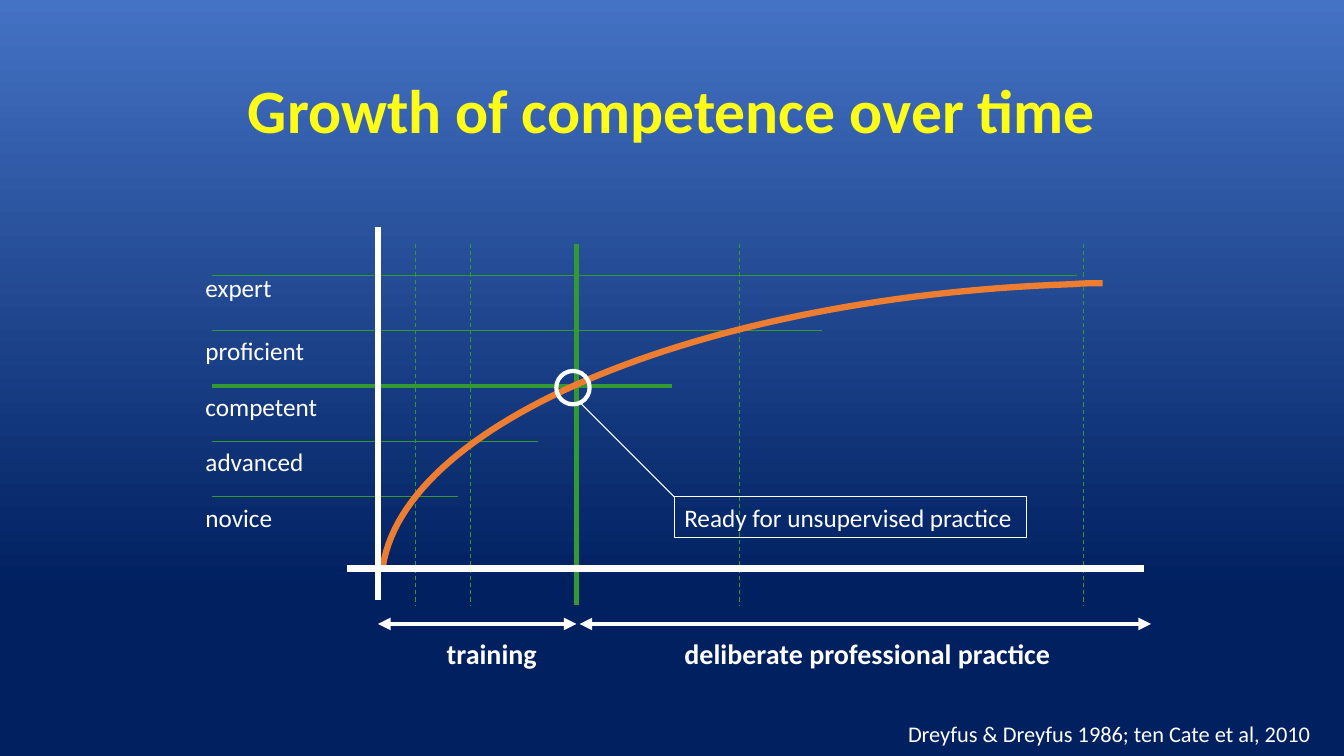
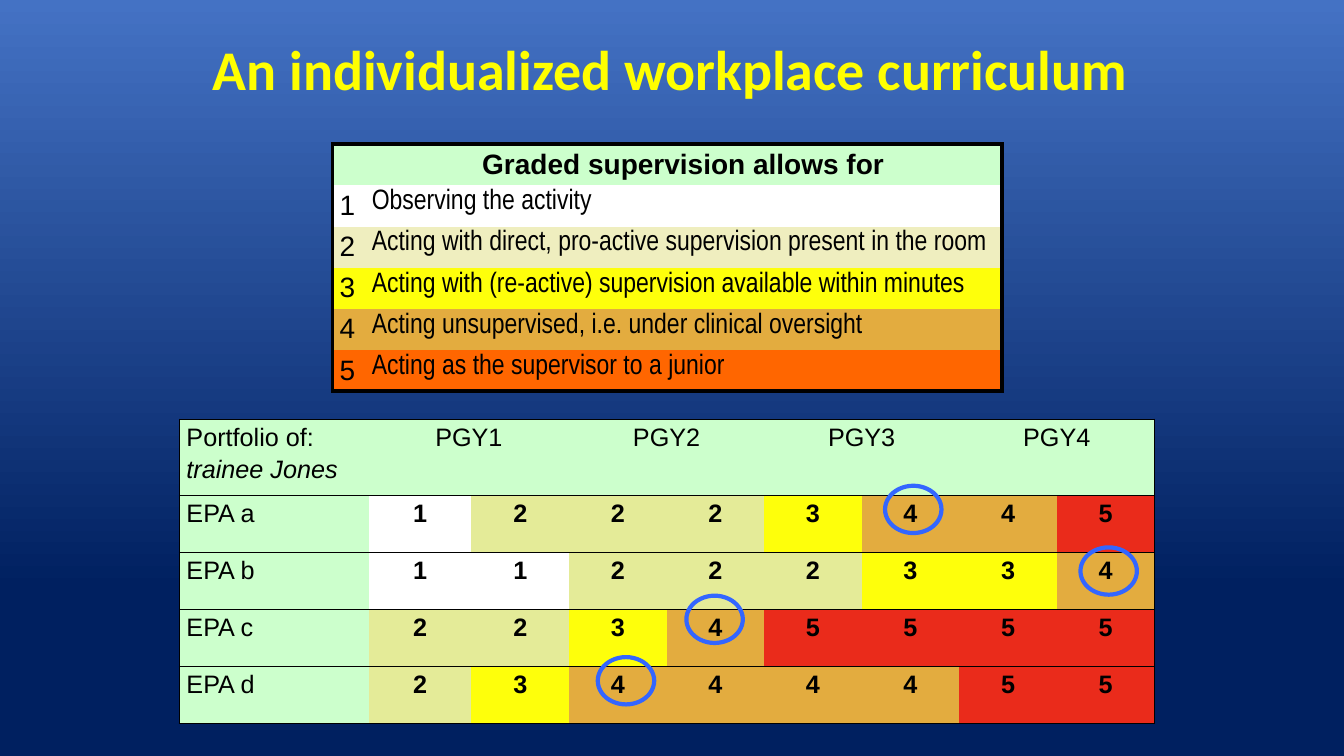
"""Build two slides on the growth of competence and graded supervision."""
from dataclasses import dataclass

from lxml.etree import SubElement
from pptx import Presentation
from pptx.dml.color import RGBColor
from pptx.enum.dml import MSO_LINE
from pptx.enum.shapes import MSO_CONNECTOR, MSO_SHAPE
from pptx.enum.text import MSO_ANCHOR, MSO_AUTO_SIZE, PP_ALIGN
from pptx.oxml import parse_xml
from pptx.oxml.ns import nsdecls, qn
from pptx.util import Pt

COLORS = {
    "sky": "4472C4", "navy": "002060", "white": "FFFFFF", "black": "000000",
    "lemon": "FFFD18", "bright yellow": "FFFF00", "green": "339933",
    "orange": "ED7D31", "mint": "CCFFCC", "blue": "3366FF",
    "cream": "EFEEBF", "lime": "E4EB98", "yellow": "FEFF0B",
    "ochre": "E3AC3F", "vivid orange": "FF6600", "red": "EA2B1B",
}
BODY_FONT = "Calibri"
TABLE_FONT = "Arial"
NO_STYLE = "{2D5ABB26-0587-4C30-8999-92F81FD0307C}"


@dataclass(frozen=True)
class Box:
    left: float
    top: float
    width: float
    height: float

    def lengths(self) -> tuple:
        return Pt(self.left), Pt(self.top), Pt(self.width), Pt(self.height)


@dataclass(frozen=True)
class TextStyle:
    size: float
    color: str = "white"
    bold: bool = False
    font: str = BODY_FONT
    align: PP_ALIGN = PP_ALIGN.LEFT
    spacing: float = 1.0


@dataclass(frozen=True)
class Stroke:
    color: str
    width: float
    dashed: bool = False
    arrows: bool = False


@dataclass(frozen=True)
class Level:
    name: str
    line_end: float
    label_shift: float = 0
    width: float = 0.75


@dataclass(frozen=True)
class Grade:
    text: str
    color: str


@dataclass(frozen=True)
class Phase:
    start: float
    end: float
    label: str
    box: Box


LEVELS = [
    Level("expert", 769, -5.8),
    Level("proficient", 587.5),
    Level("competent", 480.2, width=3),
    Level("advanced", 384.5),
    Level("novice", 326.9),
]
LEVEL_TOP, LEVEL_STEP = 196.6, 39.6
MILESTONES = [296.6, 336.2, 411.8, 528.5, 774]
READY_X = 411.8
PHASES = [
    Phase(270, READY_X, "training", Box(264.2, 451.4, 174.2, 31)),
    Phase(414, 822.2, "deliberate professional practice", Box(423.4, 451.4, 392.4, 31)),
]
CURVE = [
    [(273.6, 403.9), (290.9, 299.5), (505.4, 211.7), (766.1, 203)],
    [(766.1, 203), (773.3, 202.3), (780.5, 202.3), (787.7, 202.3)],
]
GRADES = [
    Grade("Observing the activity", "white"),
    Grade("Acting with direct, pro-active supervision present in the room", "cream"),
    Grade("Acting with (re-active) supervision available within minutes", "yellow"),
    Grade("Acting unsupervised, i.e. under clinical oversight", "ochre"),
    Grade("Acting as the supervisor to a junior", "vivid orange"),
]
PORTFOLIO = {"EPA a": "12223445", "EPA b": "11222334", "EPA c": "22345555", "EPA d": "23444455"}
PORTFOLIO_COLORS = {"1": "white", "2": "lime", "3": "yellow", "4": "ochre", "5": "red"}
HIGHLIGHTS = [(632.2, 347), (490.3, 425.5), (771.8, 391), (427, 469.4)]


def rgb(name: str) -> RGBColor:
    return RGBColor.from_string(COLORS[name])


def style_text(text_frame, style: TextStyle) -> None:
    for paragraph in text_frame.paragraphs:
        paragraph.alignment = style.align
        paragraph.line_spacing = style.spacing
        for run in paragraph.runs:
            run.font.name = style.font
            run.font.size = Pt(style.size)
            run.font.bold = style.bold
            run.font.color.rgb = rgb(style.color)


def set_background(presentation) -> None:
    fill = presentation.slide_master.background.fill
    fill.gradient()
    fill.gradient_angle = 270
    for stop, (position, color) in zip(fill.gradient_stops, [(0, "sky"), (0.78, "navy")]):
        stop.position = position
        stop.color.rgb = rgb(color)


def add_titled_slide(presentation, text: str, box: Box, size: float, color: str):
    slide = presentation.slides.add_slide(presentation.slide_layouts[5])
    title = slide.shapes.title
    title.left, title.top, title.width, title.height = box.lengths()
    title.text_frame.text = text
    title.text_frame.auto_size = MSO_AUTO_SIZE.NONE
    title.text_frame.vertical_anchor = MSO_ANCHOR.MIDDLE
    style_text(title.text_frame, TextStyle(size, color, True, align=PP_ALIGN.CENTER, spacing=0.9))
    return slide


def fill_text(shape, text: str, style: TextStyle, wrap: bool) -> None:
    text_frame = shape.text_frame
    text_frame.text = text
    text_frame.word_wrap = wrap
    text_frame.auto_size = MSO_AUTO_SIZE.SHAPE_TO_FIT_TEXT
    style_text(text_frame, style)


def add_text(slide, text: str, box: Box, style: TextStyle, wrap: bool = True) -> None:
    fill_text(slide.shapes.add_textbox(*box.lengths()), text, style, wrap)


def set_stroke(line, stroke: Stroke) -> None:
    line.color.rgb = rgb(stroke.color)
    line.width = Pt(stroke.width)
    if stroke.dashed:
        line.dash_style = MSO_LINE.DASH


def add_line(slide, x1: float, y1: float, x2: float, y2: float, stroke: Stroke) -> None:
    connector = slide.shapes.add_connector(
        MSO_CONNECTOR.STRAIGHT, Pt(x1), Pt(y1), Pt(x2), Pt(y2))
    set_stroke(connector.line, stroke)
    properties = connector._element.spPr
    if stroke.arrows:
        outline = properties.find(qn("a:ln"))
        for end in ("a:headEnd", "a:tailEnd"):
            SubElement(outline, qn(end), type="triangle")
    SubElement(properties, qn("a:effectLst"))


def add_outline(slide, preset: MSO_SHAPE, box: Box, stroke: Stroke):
    shape = slide.shapes.add_shape(preset, *box.lengths())
    shape.shadow.inherit = False
    shape.fill.background()
    set_stroke(shape.line, stroke)
    return shape


def bezier_points(controls: list, steps: int) -> list:
    points = []
    for step in range(1, steps + 1):
        t = step / steps
        weights = [(1 - t) ** 3, 3 * t * (1 - t) ** 2, 3 * t ** 2 * (1 - t), t ** 3]
        points.append(tuple(
            Pt(sum(weight * point[axis] for weight, point in zip(weights, controls)))
            for axis in (0, 1)))
    return points


def add_curve(slide) -> None:
    start_x, start_y = CURVE[0][0]
    builder = slide.shapes.build_freeform(Pt(start_x), Pt(start_y))
    for controls, steps in zip(CURVE, (60, 4)):
        builder.add_line_segments(bezier_points(controls, steps), close=False)
    curve = builder.convert_to_shape()
    curve.shadow.inherit = False
    curve.fill.background()
    set_stroke(curve.line, Stroke("orange", 4.5))


def add_plain_table(slide, box: Box, columns: list, rows: list):
    frame = slide.shapes.add_table(len(rows), len(columns), *box.lengths())
    table = frame.table
    table.first_row = table.horz_banding = False
    for style_id in frame._element.iter(qn("a:tableStyleId")):
        style_id.text = NO_STYLE
    for column, width in zip(table.columns, columns):
        column.width = Pt(width)
    for row, height in zip(table.rows, rows):
        row.height = Pt(height)
    return table


def fill_cell(cell, text: str, color: str, style: TextStyle) -> None:
    cell.margin_left = cell.margin_right = Pt(5)
    cell.margin_top = cell.margin_bottom = Pt(0)
    cell.fill.solid()
    cell.fill.fore_color.rgb = rgb(color)
    if text:
        cell.text_frame.text = text
        style_text(cell.text_frame, style)


def add_borders(table, width: float, row_lines: bool) -> None:
    last_row, last_column = len(table.rows) - 1, len(table.columns) - 1
    for row in range(last_row + 1):
        for column in range(last_column + 1):
            cell = table.cell(row, column)
            right = column + (cell.span_width - 1 if cell.is_merge_origin else 0)
            sides = {
                "lnL": column == 0,
                "lnR": right == last_column,
                "lnT": row_lines or row == 0,
                "lnB": row_lines or row == last_row,
            }
            properties = cell._tc.get_or_add_tcPr()
            for side in reversed([name for name, drawn in sides.items() if drawn]):
                properties.insert(0, parse_xml(
                    f'<a:{side} {nsdecls("a")} w="{Pt(width)}"><a:solidFill>'
                    f'<a:srgbClr val="{COLORS["black"]}"/></a:solidFill></a:{side}>'))


def build_growth_slide(presentation) -> None:
    slide = add_titled_slide(
        presentation, "Growth of competence over time", Box(66, 28.8, 828, 104.4), 44, "lemon")
    label_style = TextStyle(18)
    phase_style = TextStyle(20, bold=True, align=PP_ALIGN.CENTER)
    for phase in PHASES:
        add_text(slide, phase.label, phase.box, phase_style)
        add_line(slide, phase.start, 445.7, phase.end, 445.7, Stroke("white", 3, arrows=True))
    for index, level in enumerate(LEVELS):
        y = LEVEL_TOP + index * LEVEL_STEP
        add_line(slide, 151.2, y, level.line_end, y, Stroke("green", level.width))
        add_text(slide, level.name, Box(139.7, y + level.label_shift, 130, 28.8), label_style)
    for x in MILESTONES:
        ready = x == READY_X
        add_line(slide, x, 174, x, 432, Stroke("green", 3 if ready else 0.75, not ready))
    add_curve(slide)
    axis = Stroke("white", 4.5)
    add_line(slide, 247.7, 406.1, 817.2, 406.1, axis)
    add_line(slide, 270, 162, 270, 428.4, axis)
    add_text(slide, "Dreyfus & Dreyfus 1986; ten Cate et al, 2010",
             Box(641.5, 511.2, 306, 26.6), TextStyle(16), wrap=False)
    add_outline(slide, MSO_SHAPE.OVAL, Box(397.4, 265, 23.8, 23.8), Stroke("white", 3))
    thin = Stroke("white", 0.75)
    callout = add_outline(slide, MSO_SHAPE.RECTANGLE, Box(481.7, 355, 251.3, 28.8), thin)
    fill_text(callout, "Ready for unsupervised practice", label_style, wrap=False)
    add_line(slide, 415.4, 288.7, 481.7, 355, thin)


def add_portfolio_table(slide) -> None:
    table = add_plain_table(slide, Box(128.2, 299.5, 696.5, 217.5),
                            [135.2, 73.4] + [69.7] * 7, [54.3] + [40.8] * 4)
    plain = TextStyle(18, "black", font=TABLE_FONT, spacing=1.15)
    centered = TextStyle(18, "black", False, TABLE_FONT, PP_ALIGN.CENTER, 1.15)
    bold = TextStyle(18, "black", True, TABLE_FONT, PP_ALIGN.CENTER, 1.15)
    heading = table.cell(0, 0)
    fill_cell(heading, "Portfolio of:\ntrainee Jones", "mint", plain)
    heading.text_frame.paragraphs[1].runs[0].font.italic = True
    for year in range(1, 5):
        cell = table.cell(0, 2 * year - 1)
        cell.merge(table.cell(0, 2 * year))
        fill_cell(cell, f"PGY{year}", "mint", centered)
    for row, (activity, grades) in enumerate(PORTFOLIO.items(), start=1):
        fill_cell(table.cell(row, 0), activity, "mint", plain)
        for column, grade in enumerate(grades, start=1):
            fill_cell(table.cell(row, column), grade, PORTFOLIO_COLORS[grade], bold)
    add_borders(table, 1, row_lines=True)


def add_supervision_table(slide) -> None:
    table = add_plain_table(slide, Box(237.6, 103, 478, 176.4), [23, 455], [29.4] * 6)
    header = TextStyle(20, "black", True, TABLE_FONT, PP_ALIGN.CENTER, 1.15)
    number = TextStyle(20, "black", font=TABLE_FONT, spacing=1.15)
    narrow = TextStyle(20, "black", font="Arial Narrow", spacing=1.15)
    fill_cell(table.cell(0, 0), "", "mint", header)
    fill_cell(table.cell(0, 1), "Graded supervision allows for", "mint", header)
    for row, grade in enumerate(GRADES, start=1):
        fill_cell(table.cell(row, 0), str(row), grade.color, number)
        fill_cell(table.cell(row, 1), grade.text, grade.color, narrow)
    add_borders(table, 3, row_lines=False)


def build_curriculum_slide(presentation) -> None:
    slide = add_titled_slide(presentation, "An individualized workplace curriculum",
                             Box(132.5, 23, 692.6, 56.9), 40, "bright yellow")
    add_portfolio_table(slide)
    for left, top in HIGHLIGHTS:
        add_outline(slide, MSO_SHAPE.OVAL, Box(left, top, 40.3, 33.8), Stroke("blue", 3))
    add_supervision_table(slide)


def main() -> None:
    presentation = Presentation()
    presentation.slide_width, presentation.slide_height = Pt(960), Pt(540)
    set_background(presentation)
    build_growth_slide(presentation)
    build_curriculum_slide(presentation)
    presentation.save("out.pptx")


if __name__ == "__main__":
    main()
